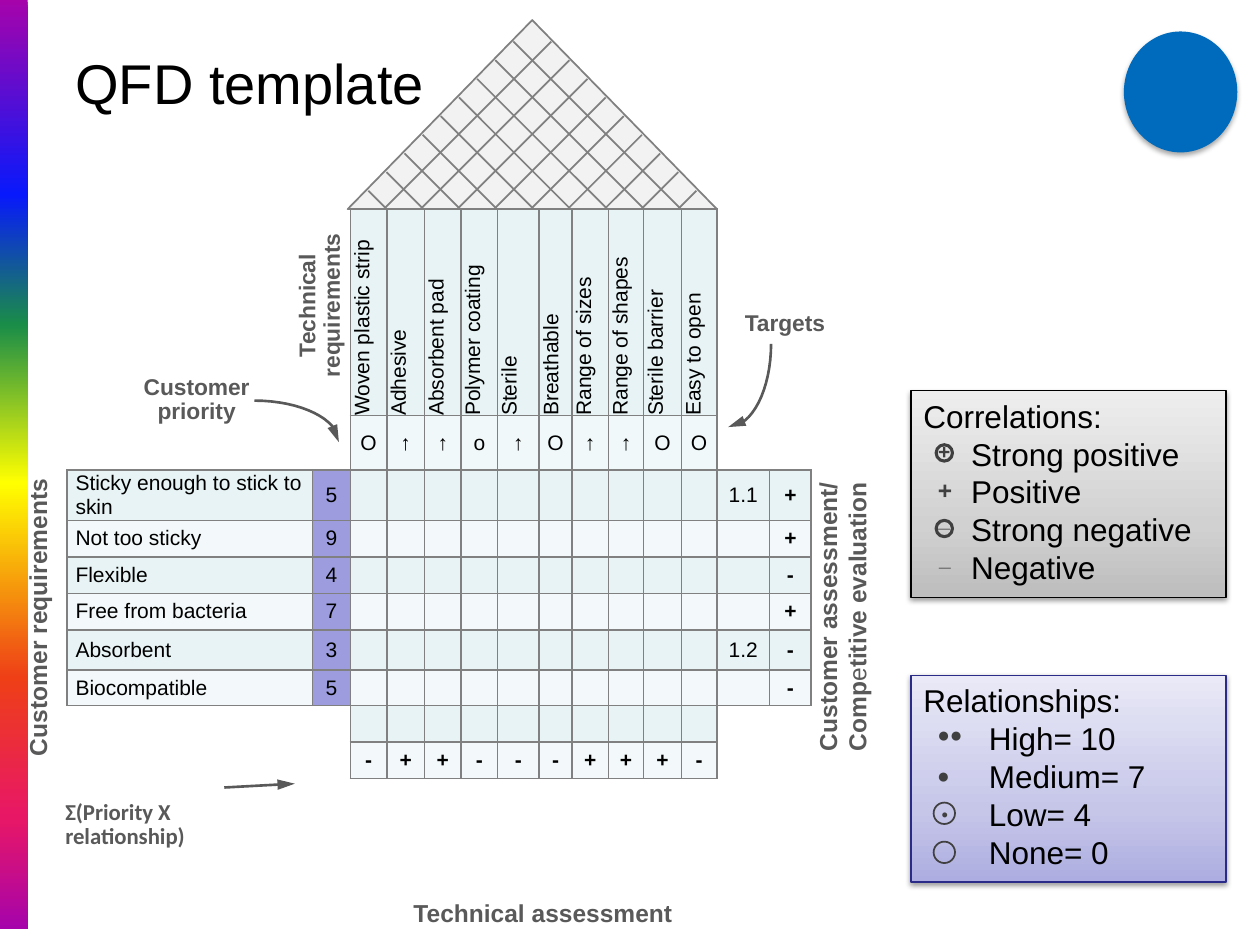
from lxml.etree import SubElement
from pptx import Presentation
from pptx.dml.color import RGBColor
from pptx.enum.shapes import MSO_CONNECTOR as Connector, MSO_SHAPE as Shape
from pptx.enum.text import MSO_ANCHOR as Anchor, PP_ALIGN as Align
from pptx.oxml.ns import qn
from pptx.util import Inches, Pt

GRAY, DARK, SYMBOL = "808080", "595959", "404040"
PALE, PALER, PRIORITY = "E7F3F4", "F3F9FA", "9C9CDF"
NO_TABLE_STYLE = "{2D5ABB26-0587-4C30-8999-92F81FD0307C}"
SPECTRUM = [(0, "A603AB"), (21, "0819FB"), (35, "1A8D48"), (52, "FFFF00"),
            (73, "EE3F17"), (88, "E81766"), (100, "A603AB")]
TECHNICAL = ["Woven plastic strip", "Adhesive", "Absorbent pad", "Polymer coating", "Sterile",
             "Breathable", "Range of sizes", "Range of shapes", "Sterile barrier", "Easy to open"]
TARGETS = "O↑↑o↑O↑↑OO"
CUSTOMER = [("Sticky enough to stick to skin", "5", "1.1", "+"), ("Not too sticky", "9", "", "+"),
            ("Flexible", "4", "", "-"), ("Free from bacteria", "7", "", "+"),
            ("Absorbent", "3", "1.2", "-"), ("Biocompatible", "5", "", "-")]
ASSESSMENT = "-++---+++-"


def color(value):
    return RGBColor.from_string(value)


def write(frame, lines, size=12, font="Arial", ink="000000", bold=False, align=Align.LEFT,
          anchor=Anchor.TOP, wrap=True, spacing=None, insets=None, indent=0):
    """Each line is a string or a list of (text, bold) runs; indent skips the first line."""
    frame.word_wrap, frame.vertical_anchor = wrap, anchor
    if insets:
        (frame.margin_left, frame.margin_top,
         frame.margin_right, frame.margin_bottom) = map(Inches, insets)
    for index, line in enumerate(lines):
        paragraph = frame.add_paragraph() if index else frame.paragraphs[0]
        paragraph.alignment = align
        if spacing:
            paragraph.line_spacing = Pt(spacing)
        if indent and index:
            properties = paragraph._p.get_or_add_pPr()
            properties.set("marL", str(Inches(indent)))
            properties.set("indent", "0")
        for text, heavy in [(line, bold)] if isinstance(line, str) else line:
            run = paragraph.add_run()
            run.text = text
            run.font.size, run.font.name, run.font.bold = Pt(size), font, heavy
            run.font.color.rgb = color(ink)


def add_text(slide, left, top, width, height, *lines, rotation=0, **style):
    box = slide.shapes.add_textbox(*map(Inches, (left, top, width, height)))
    box.rotation = rotation
    write(box.text_frame, lines, **style)


def outline(line, ink, width):
    line.color.rgb, line.width = color(ink), Pt(width)


def add_gradient(parent, stops, angle):
    gradient = SubElement(parent, qn("a:gradFill"), rotWithShape="1")
    stop_list = SubElement(gradient, qn("a:gsLst"))
    for position, ink in stops:
        stop = SubElement(stop_list, qn("a:gs"), pos=str(position * 1000))
        SubElement(stop, qn("a:srgbClr"), val=ink)
    SubElement(gradient, qn("a:lin"), ang=str(angle * 60000), scaled="0")
    return gradient


def add_shadow(shape, alpha, distance):
    effects = shape._element.spPr.find(qn("a:effectLst"))
    shadow = SubElement(effects, qn("a:outerShdw"), blurRad=str(Pt(3.1)), dist=str(Pt(distance)),
                        dir="5400000", rotWithShape="0")
    ink = SubElement(shadow, qn("a:srgbClr"), val="000000")
    SubElement(ink, qn("a:alpha"), val=str(alpha * 1000))


def add_box(slide, kind, left, top, width, height, fill=None, gradient=None, line=None):
    shape = slide.shapes.add_shape(kind, *map(Inches, (left, top, width, height)))
    shape.shadow.inherit = False
    shape.fill.background()
    if fill:
        shape.fill.solid()
        shape.fill.fore_color.rgb = color(fill)
    if gradient:
        properties = shape._element.spPr
        properties.replace(properties.find(qn("a:noFill")), add_gradient(properties, *gradient))
    if line:
        outline(shape.line, *line)
    else:
        shape.line.fill.background()
    return shape


def add_line(slide, x1, y1, x2, y2, ink, width):
    line = slide.shapes.add_connector(Connector.STRAIGHT, *map(Inches, (x1, y1, x2, y2)))
    outline(line.line, ink, width)
    SubElement(line._element.spPr, qn("a:effectLst"))
    return line


def add_arrowhead(shape):
    line = shape._element.spPr.find(qn("a:ln"))
    SubElement(line, qn("a:tailEnd"), type="triangle", w="med", len="lg")


def add_freeform(slide, points, close):
    start, *others = [tuple(map(Inches, point)) for point in points]
    builder = slide.shapes.build_freeform(*start)
    builder.add_line_segments(others, close=close)
    shape = builder.convert_to_shape()
    shape.shadow.inherit = False
    return shape


def add_curved_arrow(slide, *controls, steps=16):
    def point(t):
        weights = ((1 - t) ** 3, 3 * t * (1 - t) ** 2, 3 * t * t * (1 - t), t ** 3)
        return [sum(w * c[axis] for w, c in zip(weights, controls)) for axis in (0, 1)]
    curve = add_freeform(slide, [point(step / steps) for step in range(steps + 1)], close=False)
    curve.fill.background()
    outline(curve.line, DARK, 1.5)
    add_arrowhead(curve)


def add_roof(slide, left, top, width, height):
    center = left + width / 2
    roof = add_freeform(slide, [(left, top + height), (center, top),
                                (left + width, top + height)], close=True)
    roof.fill.solid()
    roof.fill.fore_color.rgb = color("F2F2F2")
    outline(roof.line, GRAY, 1)
    # Diagonals start on the slopes; the table covers their lower ends
    reaches = (1.33, 1.33, 1.17, 1.06, 0.96, 0.89, 0.83, 0.74, 0.74)
    for side in (-1, 1):
        for index, reach in enumerate(reaches):
            x = center + side * (0.15 + 0.144 * index)
            y = top + 0.17 + 0.148 * index
            add_line(slide, x, y, x - side * reach, y + reach, GRAY, 1)


def fill_cell(cell, text, fill, bold=False, label=False, vertical=False):
    write(cell.text_frame, [text] if text else [], bold=bold)
    cell.vertical_anchor = Anchor.MIDDLE
    cell.margin_left = Inches(0.07 if label else 0)
    cell.margin_bottom = Inches(0.07 if vertical else 0)
    cell.margin_top = cell.margin_right = 0
    paragraph = cell.text_frame.paragraphs[0]
    paragraph.alignment = Align.LEFT if label or vertical else Align.CENTER
    SubElement(paragraph._p, qn("a:endParaRPr"), sz="1200")
    properties = cell._tc.get_or_add_tcPr()
    if vertical:
        properties.set("vert", "vert270")
    if not fill:
        cell.fill.background()
        return
    for side in ("a:lnL", "a:lnR", "a:lnT", "a:lnB"):
        border = SubElement(properties, qn(side), w=str(Pt(1)))
        SubElement(SubElement(border, qn("a:solidFill")), qn("a:srgbClr"), val=GRAY)
    cell.fill.solid()
    cell.fill.fore_color.rgb = color(fill)


def add_house_table(slide, left, top):
    widths = [1.95, 0.3, 0.29, 0.3, 0.29, 0.29, 0.33, 0.26, 0.29, 0.28, 0.3, 0.28, 0.42, 0.33]
    heights = [1.64, 0.43, 0.37, 0.29, 0.29, 0.29, 0.32, 0.28, 0.29, 0.29]
    blank = [""] * 10
    rows = [["", "", *TECHNICAL, "", ""], ["", "", *TARGETS, "", ""]]
    rows += [[need, priority, *blank, score, sign] for need, priority, score, sign in CUSTOMER]
    rows += [["", "", *blank, "", ""], ["", "", *ASSESSMENT, "", ""]]
    frame = slide.shapes.add_table(len(rows), len(widths), Inches(left), Inches(top),
                                   Inches(sum(widths)), Inches(sum(heights)))
    table = frame.table
    table.first_row = table.horz_banding = False
    table._tbl.tblPr.find(qn("a:tableStyleId")).text = NO_TABLE_STYLE
    for column, width in zip(table.columns, widths):
        column.width = Inches(width)
    for r, texts in enumerate(rows):
        table.rows[r].height = Inches(heights[r])
        in_body = 2 <= r <= 7
        band = "F0F8F9" if r == 1 else (PALER if r % 2 else PALE)
        for c, text in enumerate(texts):
            fill = band if in_body or 2 <= c <= 11 else None
            fill_cell(table.cell(r, c), text, PRIORITY if in_body and c == 1 else fill,
                      bold=c == 13 or r == 9, label=c == 0, vertical=r == 0 and fill is not None)


def add_legend(slide, left, top, lines, stops, line, indent):
    panel = add_box(slide, Shape.RECTANGLE, left, top, 2.5, 1.64,
                    gradient=(stops, 270), line=(line, 0.75))
    add_shadow(panel, 38, 1.6)
    write(panel.text_frame, lines, size=18, indent=indent)


def add_symbol(slide, left, top, size, text="", text_size=12, insets=None, line=None, bold=True):
    ring = add_box(slide, Shape.OVAL, left, top, size, size, line=line)
    if text:
        write(ring.text_frame, [text], size=text_size, ink=SYMBOL, bold=bold, align=Align.CENTER,
              anchor=Anchor.MIDDLE, wrap=False, insets=insets)


def add_correlations(slide, left, top):
    add_legend(slide, left, top, ["Correlations:", "Strong positive", "Positive",
                                  "Strong negative", "Negative"],
               [(0, "BDBDBD"), (35, "D1D1D1"), (100, "EEEEEE")], "000000", 0.38)
    ring = (SYMBOL, 1.75)
    add_symbol(slide, left + 0.2, top + 0.43, 0.13, "+", 12, (0.01, 0, 0.01, 0.02), ring)
    add_symbol(slide, left + 0.14, top + 0.67, 0.25, "+", 14, (0.01, 0, 0, 0.01))
    add_symbol(slide, left + 0.2, top + 1.03, 0.13, "_", 12, (0.01, 0, 0.01, 0.15), ring)
    add_symbol(slide, left + 0.2, top + 1.34, 0.13, "_", 12, (0.01, 0, 0, 0.15))


def add_relationships(slide, left, top):
    add_legend(slide, left, top, ["Relationships:", "High= 10", "Medium= 7", "Low= 4", "None= 0"],
               [(0, "ADADE1"), (35, "C6C6E9"), (100, "E9E9F7")], "2A2A89", 0.52)
    for dots, offset, width in (("●●", 0.32, 0.41), ("●", 0.64, 0.3)):
        add_text(slide, left + 0.11, top + offset, width, 0.3, dots,
                 font="Times New Roman", ink=SYMBOL, wrap=False)
    ring = (SYMBOL, 1)
    add_symbol(slide, left + 0.18, top + 1.32, 0.17, line=ring)
    add_symbol(slide, left + 0.18, top + 1.01, 0.17, "•", 10.5, (0.01, 0.01, 0, 0), ring, False)


def add_labels(slide):
    style = dict(size=13, ink=DARK, bold=True, align=Align.CENTER)
    large = {**style, "size": 14}
    add_text(slide, 0.77, 2.93, 1.58, 0.49, "Customer priority", spacing=14, **style)
    add_text(slide, -0.91, 4.73, 2.42, 0.34, "Customer requirements",
             rotation=270, wrap=False, **large)
    add_text(slide, 1.75, 2.18, 1.58, 0.49, "Technical requirements",
             rotation=270, spacing=14, **style)
    add_text(slide, 5.78, 2.4, 0.9, 0.32, "Targets", **style)
    add_text(slide, 5.5, 4.61, 2.37, 0.57, "Customer assessment/",
             [("Comp", True), ("e", False), ("titive evaluation", True)],
             rotation=270, wrap=False, **large)
    add_text(slide, 0.42, 6.1, 2, 0.69, "Σ(Priority X relationship)", font="Calibri", spacing=14,
             anchor=Anchor.BOTTOM, **{**style, "align": Align.LEFT})
    add_text(slide, 2.83, 7.12, 2.96, 0.3, "Technical assessment", spacing=14, **large)
    # Arrows from the labels to the table
    add_curved_arrow(slide, (2.02, 3.18), (2.39, 3.18), (2.69, 3.33), (2.69, 3.51))
    add_curved_arrow(slide, (6.12, 2.73), (6.12, 3.09), (5.97, 3.39), (5.78, 3.39))
    add_arrowhead(add_line(slide, 1.78, 6.25, 2.34, 6.22, DARK, 1.5))


def main():
    presentation = Presentation()
    presentation.slide_width, presentation.slide_height = Inches(10), Inches(7.5)
    slide = presentation.slides.add_slide(presentation.slide_layouts[6])
    # Side band and title
    add_box(slide, Shape.RECTANGLE, 0, 0, 0.22, 7.37, gradient=(SPECTRUM, 90))
    add_text(slide, 0.5, 0.3, 9, 0.7, "QFD template", size=32, anchor=Anchor.MIDDLE)
    # House of quality
    add_roof(slide, 2.76, 0.16, 2.93, 1.5)
    add_house_table(slide, 0.53, 1.66)
    add_labels(slide)
    # Legends and badge
    add_correlations(slide, 7.23, 3.1)
    add_relationships(slide, 7.23, 5.36)
    add_shadow(add_box(slide, Shape.OVAL, 8.92, 0.25, 0.9, 0.96, fill="006BBC"), 35, 1.8)
    presentation.save("out.pptx")


if __name__ == "__main__":
    main()
